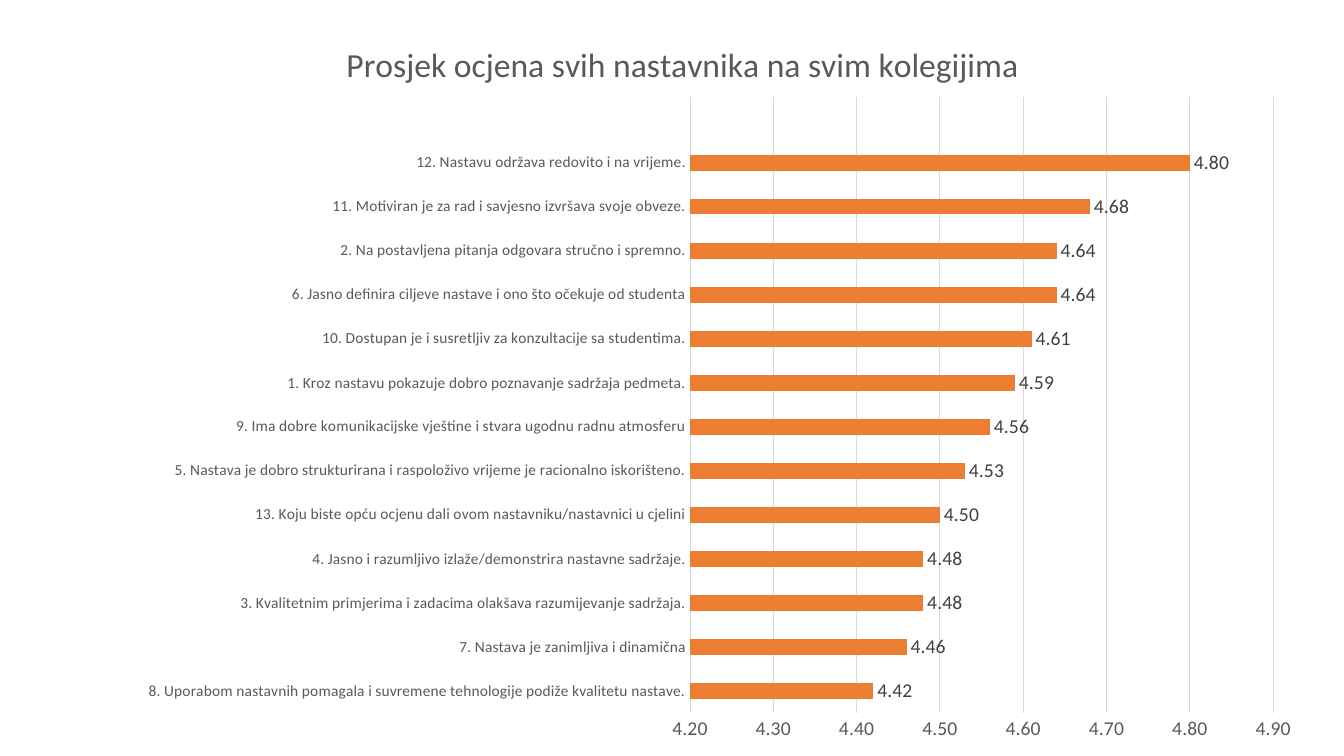
from lxml import etree
from pptx import Presentation
from pptx import util as u
from pptx.chart.data import CategoryChartData
from pptx.dml.color import RGBColor
from pptx.enum import chart as charts
from pptx.oxml.ns import qn

RATINGS = [
    ("8. Uporabom nastavnih pomagala i suvremene tehnologije podiže kvalitetu nastave.", 4.42),
    ("7. Nastava je zanimljiva i dinamična", 4.46),
    ("3. Kvalitetnim primjerima i zadacima olakšava razumijevanje sadržaja.", 4.48),
    ("4. Jasno i razumljivo izlaže/demonstrira nastavne sadržaje.", 4.48),
    ("13. Koju biste opću ocjenu dali ovom nastavniku/nastavnici u cjelini", 4.5),
    ("5. Nastava je dobro strukturirana i raspoloživo vrijeme je racionalno iskorišteno.", 4.53),
    ("9. Ima dobre komunikacijske vještine i stvara ugodnu radnu atmosferu", 4.56),
    ("1. Kroz nastavu pokazuje dobro poznavanje sadržaja pedmeta.", 4.59),
    ("10. Dostupan je i susretljiv za konzultacije sa studentima.", 4.61),
    ("6. Jasno definira ciljeve nastave i ono što očekuje od studenta", 4.64),
    ("2. Na postavljena pitanja odgovara stručno i spremno.", 4.64),
    ("11. Motiviran je za rad i savjesno izvršava svoje obveze.", 4.68),
    ("12. Nastavu održava redovito i na vrijeme.", 4.8),
    ("", None),
]


def color(code):
    return RGBColor.from_string(code)


class SlideBuilder:
    font_name = "Calibri"
    muted = "595959"
    dark = "404040"
    rule = "D9D9D9"
    accent = "ED7D31"
    number_format = "0.00"

    def __init__(self, deck):
        self.deck = deck
        self.page = deck.slides.add_slide(deck.slide_layouts[6])

    def style_font(self, font, size, code):
        font.name = self.font_name
        font.size = u.Pt(size)
        font.bold = False
        font.color.rgb = color(code)

    def style_line(self, line):
        line.color.rgb = color(self.rule)
        line.width = u.Pt(0.75)

    def place(self, element, index, **settings):
        for layout in element.findall(qn("c:layout")):
            element.remove(layout)
        layout = etree.Element(qn("c:layout"))
        manual = etree.SubElement(layout, qn("c:manualLayout"))
        for tag, value in settings.items():
            etree.SubElement(manual, qn(f"c:{tag}")).set("val", str(value))
        element.insert(index, layout)

    def bar_chart(self, left, top, width, height, ratings):
        data = CategoryChartData(number_format=self.number_format)
        data.categories = [question for question, rating in ratings]
        data.add_series("Series 1", [rating for question, rating in ratings])
        across, down = self.deck.slide_width, self.deck.slide_height
        frame = self.page.shapes.add_chart(
            charts.XL_CHART_TYPE.BAR_CLUSTERED,
            int(left * across), int(top * down),
            int(width * across), int(height * down), data)
        chart = frame.chart
        chart.has_legend = False
        self.style_font(chart.font, 10, "000000")
        self.bars(chart.plots[0])
        self.question_axis(chart.category_axis)
        self.rating_axis(chart.value_axis)
        plot_area = chart.plots[0]._element.getparent()
        self.place(plot_area, 0, layoutTarget="inner", xMode="edge", yMode="edge",
                   x=0.514, y=0.128, w=0.452, h=0.815)
        return chart

    def chart_title(self, chart, words):
        chart.has_title = True
        title = chart.chart_title
        title.include_in_layout = False
        paragraph = title.text_frame.paragraphs[0]
        paragraph.text = words
        self.style_font(paragraph.font, 24, self.muted)
        self.place(title._element, 1, xMode="edge", yMode="edge", x=0.243, y=0.048)

    def bars(self, plot):
        plot.gap_width = 182
        plot.vary_by_categories = False
        series = plot.series[0]
        series.format.fill.solid()
        series.format.fill.fore_color.rgb = color(self.accent)
        labels = series.data_labels
        labels.show_value = True
        labels.position = charts.XL_LABEL_POSITION.OUTSIDE_END
        labels.number_format = self.number_format
        labels.number_format_is_linked = False
        self.style_font(labels.font, 14, self.dark)

    def plain_axis(self, axis, size):
        axis.major_tick_mark = charts.XL_TICK_MARK.NONE
        axis.minor_tick_mark = charts.XL_TICK_MARK.NONE
        self.style_font(axis.tick_labels.font, size, self.muted)

    def question_axis(self, axis):
        self.plain_axis(axis, 11)
        axis.has_major_gridlines = False
        self.style_line(axis.format.line)

    def rating_axis(self, axis):
        self.plain_axis(axis, 14)
        axis.minimum_scale, axis.maximum_scale, axis.major_unit = 4.2, 4.9, 0.1
        axis.has_major_gridlines = True
        self.style_line(axis.major_gridlines.format.line)
        axis.format.line.fill.background()
        axis.tick_labels.number_format = self.number_format
        axis.tick_labels.number_format_is_linked = False


def main():
    deck = Presentation()
    deck.slide_width, deck.slide_height = u.Inches(13.33), u.Inches(7.5)
    builder = SlideBuilder(deck)
    chart = builder.bar_chart(0.02, 0, 0.96, 1, RATINGS)
    builder.chart_title(chart, "Prosjek ocjena svih nastavnika na svim kolegijima")
    deck.save("out.pptx")


if __name__ == "__main__":
    main()
